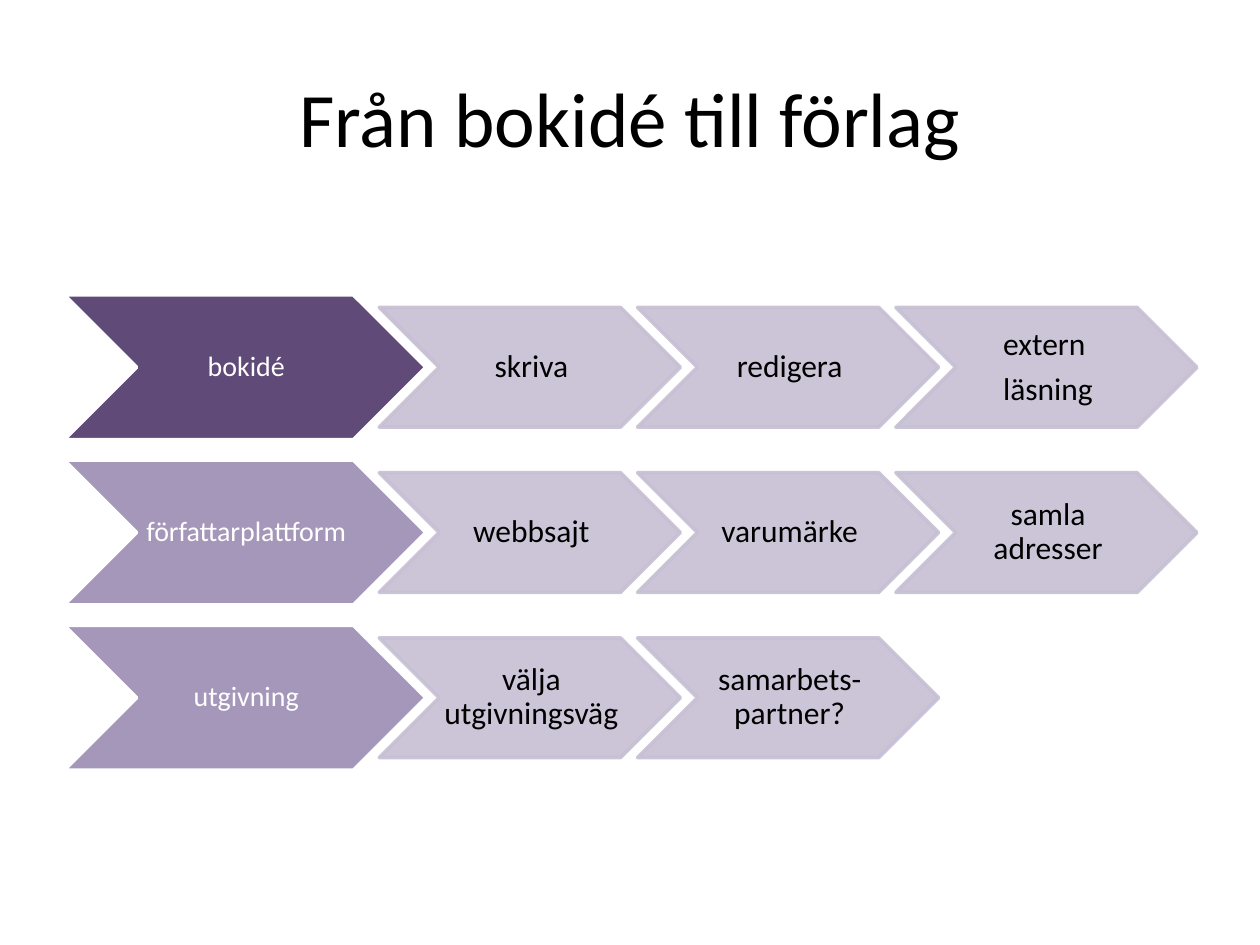
from dataclasses import dataclass

from lxml.etree import SubElement
from pptx import Presentation
from pptx.dml.color import RGBColor
from pptx.enum.shapes import MSO_SHAPE as ShapeKind
from pptx.enum.text import MSO_ANCHOR as Anchor, PP_ALIGN as Align
from pptx.oxml.ns import qn
from pptx.shapes.group import GroupShape
from pptx.util import Pt


@dataclass(frozen=True)
class Theme:
    font: str = "Calibri"
    title_size: float = 44
    black: str = "000000"
    white: str = "FFFFFF"
    dark_purple: str = "5F4A78"
    mid_purple: str = "A597B9"
    pale_purple: str = "C7BFD3"


THEME = Theme()


@dataclass(frozen=True)
class ChevronStyle:
    width: float
    height: float
    line: str
    text_color: str
    text_size: float
    left_inset: float
    opacity: int


@dataclass(frozen=True)
class Stage:
    name: str
    fill: str
    steps: tuple[str, ...]


STAGE_STYLE = ChevronStyle(206.64, 82.8, THEME.white, THEME.white, 16, 1.44, 100)
STEP_STYLE = ChevronStyle(172.08, 68.4, THEME.pale_purple, THEME.black, 18, 1.8, 90)

STAGES = (
    Stage("bokidé", THEME.dark_purple, ("skriva", "redigera", "extern \nläsning")),
    Stage("författarplattform", THEME.mid_purple,
          ("webbsajt", "varumärke", "samla adresser")),
    Stage("utgivning", THEME.mid_purple, ("välja utgivningsväg", "samarbets-partner?")),
)

# Grid of the process, in points
STAGE_LEFT, STEP_LEFT, STEP_PITCH = 36.72, 216.72, 147.6
FIRST_CENTRE, ROW_PITCH = 209.9, 94.4


def add_run(paragraph, text: str, size: float, color: str) -> None:
    run = paragraph.add_run()
    run.text = text
    run.font.name = THEME.font
    run.font.size = Pt(size)
    run.font.color.rgb = RGBColor.from_string(color)


def set_opacity(shape, percent: int) -> None:
    """Apply one opacity to the fill and the line."""
    for color in shape.element.spPr.iter(qn("a:srgbClr")):
        SubElement(color, qn("a:alpha"), val=str(percent * 1000))


def add_chevron(group: GroupShape, left: float, centre: float, text: str,
                fill: str, style: ChevronStyle) -> None:
    shape = group.shapes.add_shape(
        ShapeKind.CHEVRON, Pt(left), Pt(centre - style.height / 2),
        Pt(style.width), Pt(style.height))
    shape.shadow.inherit = False
    shape.fill.solid()
    shape.fill.fore_color.rgb = RGBColor.from_string(fill)
    shape.line.color.rgb = RGBColor.from_string(style.line)
    shape.line.width = Pt(2)
    if style.opacity < 100:
        set_opacity(shape, style.opacity)

    frame = shape.text_frame
    frame.word_wrap = True
    frame.vertical_anchor = Anchor.MIDDLE
    frame.margin_left, frame.margin_right = Pt(style.left_inset), Pt(0)
    frame.margin_top = frame.margin_bottom = Pt(0.72)
    for index, line in enumerate(text.split("\n")):
        paragraph = frame.add_paragraph() if index else frame.paragraphs[0]
        paragraph.alignment = Align.CENTER
        paragraph.line_spacing = 0.9
        paragraph.space_after = Pt(0.35 * style.text_size)
        add_run(paragraph, line, style.text_size, style.text_color)


def add_stage(group: GroupShape, stage: Stage, centre: float) -> None:
    add_chevron(group, STAGE_LEFT, centre, stage.name, stage.fill, STAGE_STYLE)
    for column, step in enumerate(stage.steps):
        add_chevron(group, STEP_LEFT + column * STEP_PITCH, centre, step,
                    THEME.pale_purple, STEP_STYLE)


def main() -> None:
    presentation = Presentation()
    presentation.slide_width, presentation.slide_height = Pt(720), Pt(540)
    slide = presentation.slides.add_slide(presentation.slide_layouts[5])

    # Title
    title = slide.shapes.title
    title.left, title.top, title.width, title.height = Pt(36), Pt(21.6), Pt(648), Pt(90)
    title.text_frame.vertical_anchor = Anchor.MIDDLE
    heading = title.text_frame.paragraphs[0]
    heading.alignment = Align.CENTER
    add_run(heading, "Från bokidé till förlag", THEME.title_size, THEME.black)

    # Process rows
    process = slide.shapes.add_group_shape()
    for row, stage in enumerate(STAGES):
        add_stage(process, stage, FIRST_CENTRE + row * ROW_PITCH)

    presentation.save("out.pptx")


if __name__ == "__main__":
    main()
